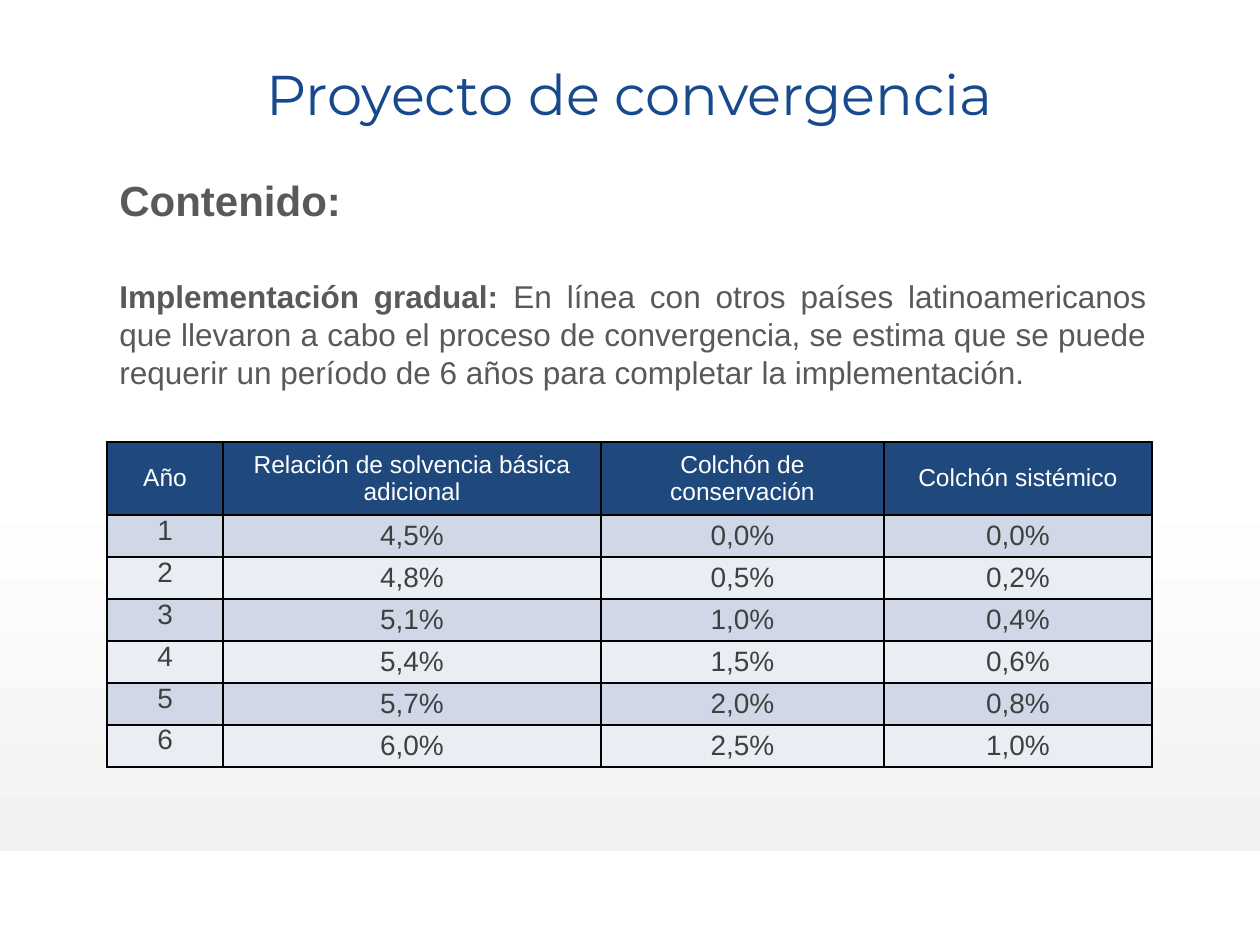
from lxml.etree import SubElement
from pptx import Presentation
from pptx.dml.color import RGBColor
from pptx.enum.shapes import MSO_SHAPE
from pptx.enum.text import MSO_ANCHOR, PP_ALIGN
from pptx.oxml.ns import qn
from pptx.util import Emu, Pt

SCALE = 914400 / 126
HEADERS = ["Año", "Relación de solvencia básica adicional",
           "Colchón de conservación", "Colchón sistémico"]
ROWS = [
    ["1", "4,5%", "0,0%", "0,0%"],
    ["2", "4,8%", "0,5%", "0,2%"],
    ["3", "5,1%", "1,0%", "0,4%"],
    ["4", "5,4%", "1,5%", "0,6%"],
    ["5", "5,7%", "2,0%", "0,8%"],
    ["6", "6,0%", "2,5%", "1,0%"],
]
COLUMN_WIDTHS = [116, 378, 283, 268]
HEADER_HEIGHT, ROW_HEIGHT = 73, 42


def px(length):
    """Turn pixels into EMU."""
    return Emu(round(length * SCALE))


def color(value):
    """Turn a hex string into a colour."""
    return RGBColor.from_string(value)


def add_span(para, text, size, ink, bold=False, font="Arial"):
    """Add one formatted run to a paragraph."""
    span = para.add_run()
    span.text = text
    span.font.name = font
    span.font.size = Pt(size)
    span.font.bold = bold
    span.font.color.rgb = color(ink)


def add_frame(page, box):
    """Add a wrapping text box and return its text frame."""
    frame = page.shapes.add_textbox(*map(px, box)).text_frame
    frame.word_wrap = True
    return frame


def add_background(page, box):
    """Draw the band that fades from white to light grey."""
    band = page.shapes.add_shape(MSO_SHAPE.RECTANGLE, *map(px, box))
    band.shadow.inherit = False
    band.line.fill.background()
    band.fill.gradient()
    band.fill.gradient_angle = 270
    for stop, shade in zip(band.fill.gradient_stops, ["FFFFFF", "F2F2F2"]):
        stop.color.rgb = color(shade)


def add_title(page, box):
    """Write the centred slide title."""
    para = add_frame(page, box).paragraphs[0]
    para.alignment = PP_ALIGN.CENTER
    add_span(para, "Proyecto de convergencia", 32, "17498D", font="Montserrat")


def add_content(page, box):
    """Write the heading and the justified paragraph below it."""
    frame = add_frame(page, box)
    heading = frame.paragraphs[0]
    add_span(heading, "Contenido:", 24, "595959", bold=True)
    body = frame.add_paragraph()
    body.space_before = Pt(30)
    add_span(body, "Implementación gradual: ", 18, "595959", bold=True)
    add_span(body, "En línea con otros países latinoamericanos que llevaron a cabo "
             "el proceso de convergencia, se estima que se puede requerir un "
             "período de 6 años para completar la implementación.", 18, "595959")
    for para in frame.paragraphs:
        para.alignment = PP_ALIGN.JUSTIFY


def add_borders(cell):
    """Give a cell thin black borders, placed before its fill."""
    properties = cell._tc.get_or_add_tcPr()
    for index, side in enumerate(["a:lnL", "a:lnR", "a:lnT", "a:lnB"]):
        line = SubElement(properties, qn(side), w=str(Pt(1)))
        SubElement(SubElement(line, qn("a:solidFill")), qn("a:srgbClr"), val="000000")
        properties.insert(index, line)


def fill_cell(cell, text, size, ink, fill, margin, anchor):
    """Write and format one table cell."""
    cell.fill.solid()
    cell.fill.fore_color.rgb = color(fill)
    cell.margin_left = cell.margin_right = px(margin)
    cell.margin_top = cell.margin_bottom = 0
    cell.vertical_anchor = anchor
    para = cell.text_frame.paragraphs[0]
    para.alignment = PP_ALIGN.CENTER
    add_span(para, text, size, ink)
    add_borders(cell)


def add_schedule(page, box):
    """Build the table of yearly requirements."""
    lines = [HEADERS] + ROWS
    table = page.shapes.add_table(len(lines), len(HEADERS), *map(px, box)).table
    for column, width in zip(table.columns, COLUMN_WIDTHS):
        column.width = px(width)
    for r, line in enumerate(lines):
        table.rows[r].height = px(ROW_HEIGHT if r else HEADER_HEIGHT)
        size, ink = (16, "404040") if r else (14, "FFFFFF")
        fill = ("D0D8E8" if r % 2 else "E9EDF4") if r else "1F497D"
        for c, text in enumerate(line):
            anchor = MSO_ANCHOR.TOP if r and c == 0 else MSO_ANCHOR.MIDDLE
            fill_cell(table.cell(r, c), text, size, ink, fill, 0 if c == 1 else 9, anchor)


def main():
    """Build and save the slide."""
    deck = Presentation()
    deck.slide_width, deck.slide_height = px(1260), px(945)
    page = deck.slides.add_slide(deck.slide_layouts[6])
    add_background(page, (0, 471, 1260, 380))
    add_title(page, (214, 53, 832, 81))
    add_content(page, (107, 168, 1052, 240))
    table_height = HEADER_HEIGHT + ROW_HEIGHT * len(ROWS)
    add_schedule(page, (107, 442, sum(COLUMN_WIDTHS), table_height))
    deck.save("out.pptx")


if __name__ == "__main__":
    main()
